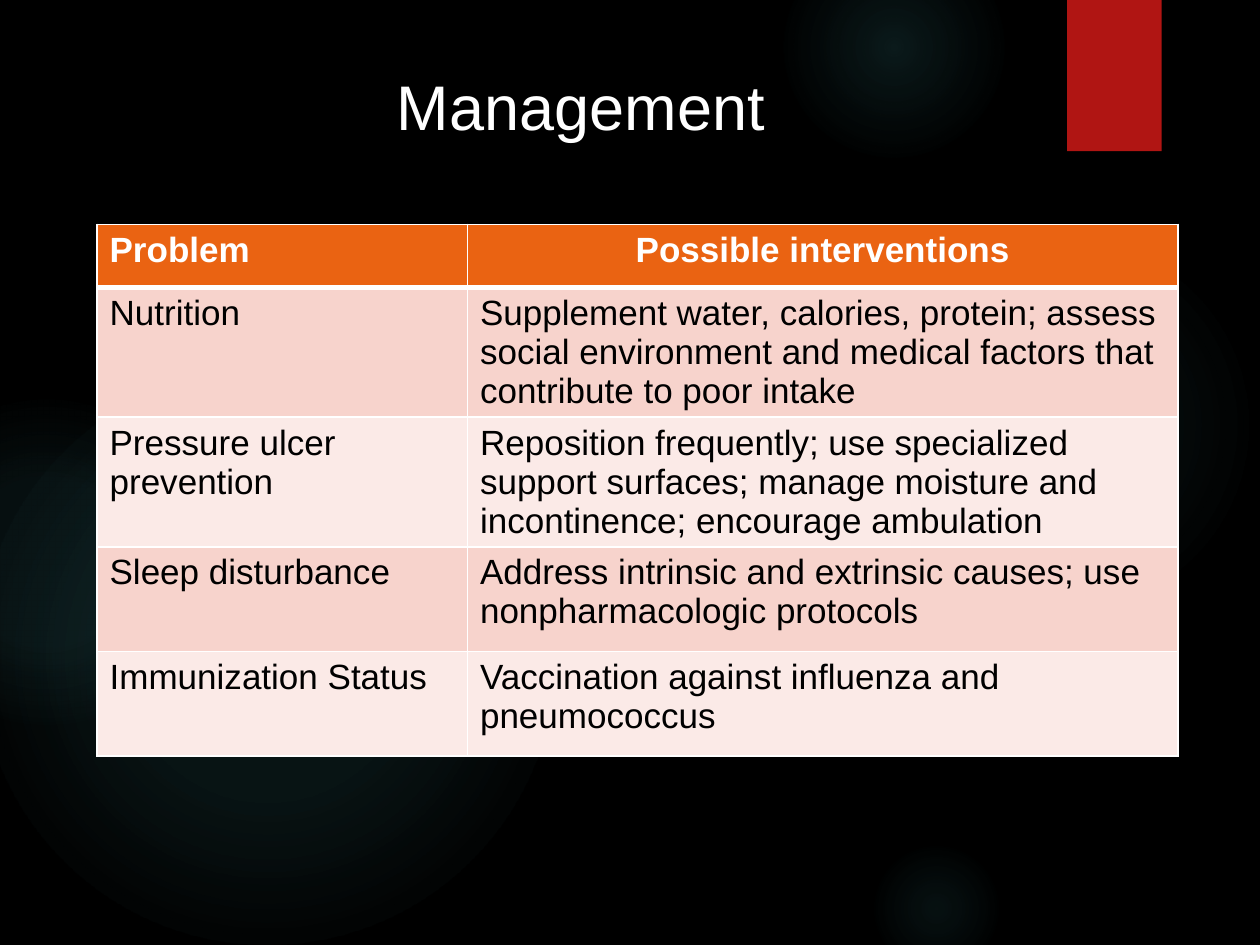
from lxml.etree import SubElement
from pptx import Presentation
from pptx.dml.color import RGBColor
from pptx.enum.shapes import MSO_SHAPE as Shape
from pptx.enum.text import PP_ALIGN as Align
from pptx.oxml.ns import qn
from pptx.util import Inches, Pt

BLACK = RGBColor(0x00, 0x00, 0x00)
WHITE = RGBColor(0xFF, 0xFF, 0xFF)
TEAL = RGBColor(0x50, 0xB9, 0xC1)
RED = RGBColor(0xB0, 0x15, 0x13)
ORANGE = RGBColor(0xEA, 0x63, 0x12)
PINK = RGBColor(0xF7, 0xD3, 0xCC)
PALE_PINK = RGBColor(0xFB, 0xEA, 0xE7)

# Left, top, diameter, then (position, opacity) stops, both in percent
GLOWS = [
    (6.89, 1.83, 3.08, [(0, 7), (36, 6), (69, 0)]),
    (6.22, -0.5, 1.75, [(0, 14), (36, 7), (73, 0)]),
    (6.89, 6.67, 1.08, [(0, 9), (36, 5), (66, 0)]),
    (-0.17, 2.92, 4.58, [(0, 11), (36, 10), (75, 0)]),
    (-0.92, 3.17, 2.58, [(0, 8), (36, 8), (72, 0)]),
]

COLUMN_WIDTHS = [2.94, 5.64]
HEADER_HEIGHT, BODY_HEIGHT = 0.5, 0.83
PROBLEMS = [
    ("Problem", "Possible interventions"),
    ("Nutrition", "Supplement water, calories, protein; assess social environment "
                  "and medical factors that contribute to poor intake"),
    ("Pressure ulcer prevention", "Reposition frequently; use specialized support surfaces; "
                                  "manage moisture and incontinence; encourage ambulation"),
    ("Sleep disturbance", "Address intrinsic and extrinsic causes; "
                          "use nonpharmacologic protocols"),
    ("Immunization Status", "Vaccination against influenza and pneumococcus"),
]


def add_child(parent, tag, **attributes):
    return SubElement(parent, qn(tag), {key: str(value) for key, value in attributes.items()})


def write(frame, text, color, align=Align.LEFT, **font_format):
    paragraph = frame.paragraphs[0]
    paragraph.alignment = align
    run = paragraph.add_run()
    run.text = text
    run.font.color.rgb = color
    for name, value in {"name": "Arial", **font_format}.items():
        setattr(run.font, name, value)


def add_plain_shape(slide, kind, left, top, width, height, color):
    shape = slide.shapes.add_shape(
        kind, Inches(left), Inches(top), Inches(width), Inches(height))
    shape.shadow.inherit = False
    shape.fill.solid()
    shape.fill.fore_color.rgb = color
    shape.line.fill.background()
    return shape


def add_glow(slide, left, top, diameter, stops):
    glow = add_plain_shape(slide, Shape.OVAL, left, top, diameter, diameter, TEAL)
    properties = glow.fill._xPr
    solid = properties.find(qn("a:solidFill"))
    gradient = add_child(properties, "a:gradFill", rotWithShape=1)
    properties.replace(solid, gradient)
    stop_list = add_child(gradient, "a:gsLst")
    for position, opacity in stops:
        stop = add_child(stop_list, "a:gs", pos=position * 1000)
        color = add_child(stop, "a:srgbClr", val=TEAL)
        add_child(color, "a:alpha", val=opacity * 1000)
    center = add_child(gradient, "a:path", path="circle")
    add_child(center, "a:fillToRect", l=50000, t=50000, r=50000, b=50000)


def set_borders(cell, **widths):
    properties = cell._tc.get_or_add_tcPr()
    for index, (side, width) in enumerate(widths.items()):
        border = add_child(properties, f"a:ln{side}", w=Pt(width))
        add_child(add_child(border, "a:solidFill"), "a:srgbClr", val=WHITE)
        properties.insert(index, border)  # borders come before the fill


def add_problem_table(slide):
    height = HEADER_HEIGHT + BODY_HEIGHT * (len(PROBLEMS) - 1)
    table = slide.shapes.add_table(
        len(PROBLEMS), len(COLUMN_WIDTHS), Inches(0.77), Inches(1.78),
        Inches(sum(COLUMN_WIDTHS)), Inches(height)).table
    for column, width in zip(table.columns, COLUMN_WIDTHS):
        column.width = Inches(width)
    for r, texts in enumerate(PROBLEMS):
        header = r == 0
        table.rows[r].height = Inches(HEADER_HEIGHT if header else BODY_HEIGHT)
        for c, text in enumerate(texts):
            cell = table.cell(r, c)
            cell.fill.solid()
            cell.fill.fore_color.rgb = ORANGE if header else (PALE_PINK, PINK)[r % 2]
            set_borders(cell, L=1, R=1, T=3 if r == 1 else 1, B=3 if header else 1)
            write(cell.text_frame, text, WHITE if header else BLACK,
                  Align.CENTER if header and c == 1 else Align.LEFT,
                  size=Pt(20), bold=header)


def add_title(slide, text):
    title = slide.shapes.add_textbox(Inches(0.71), Inches(0.49), Inches(7.94), Inches(0.5))
    title.text_frame.word_wrap = True
    write(title.text_frame, text, WHITE, Align.CENTER, size=Pt(36))


def main():
    deck = Presentation()
    deck.slide_width, deck.slide_height = Inches(10), Inches(7.5)
    slide = deck.slides.add_slide(deck.slide_layouts[6])

    # Backdrop: black with soft teal glows and a red tab
    slide.background.fill.solid()
    slide.background.fill.fore_color.rgb = BLACK
    for glow in GLOWS:
        add_glow(slide, *glow)
    add_plain_shape(slide, Shape.RECTANGLE, 8.47, 0, 0.75, 1.2, RED)

    # Content
    add_problem_table(slide)
    add_title(slide, "Management ")

    deck.save("out.pptx")


if __name__ == "__main__":
    main()
